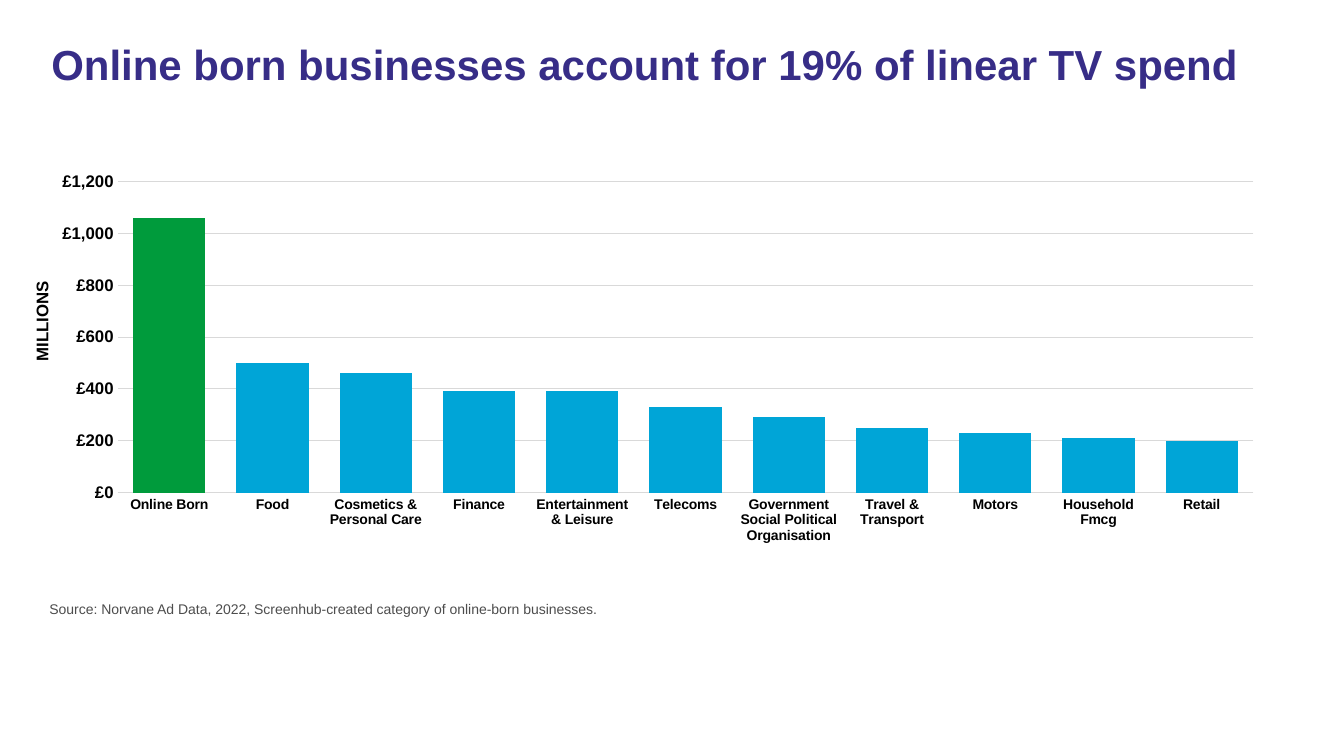
from dataclasses import dataclass

from pptx import Presentation
from pptx.chart.data import CategoryChartData
from pptx.dml.color import RGBColor
from pptx.enum.chart import XL_CHART_TYPE as ChartType, XL_TICK_MARK as Tick
from pptx.enum.text import MSO_ANCHOR as Anchor, MSO_AUTO_SIZE as AutoSize, PP_ALIGN as Align
from pptx.oxml import parse_xml
from pptx.oxml.ns import nsdecls, qn
from pptx.util import Cm, Pt


@dataclass(frozen=True)
class Theme:
    """Colours and type sizes of the slide."""
    font: str = "Arial"
    heading: RGBColor = RGBColor.from_string("372D87")
    ink: RGBColor = RGBColor.from_string("000000")
    muted: RGBColor = RGBColor.from_string("4D4D4D")
    bar: RGBColor = RGBColor.from_string("00A5D7")
    highlight: RGBColor = RGBColor.from_string("009B3C")
    grid: RGBColor = RGBColor.from_string("D9D9D9")
    heading_size: int = 30
    axis_size: int = 12
    small_size: int = 10


@dataclass(frozen=True)
class Box:
    """A region of the slide in centimetres."""
    left: float
    top: float
    width: float
    height: float

    def lengths(self):
        """Return the four measures as lengths."""
        return [Cm(self.left), Cm(self.top), Cm(self.width), Cm(self.height)]


THEME = Theme()
SPEND = {
    "Online Born": 1060,
    "Food": 500,
    "Cosmetics & Personal Care": 460,
    "Finance": 390,
    "Entertainment & Leisure": 390,
    "Telecoms": 330,
    "Government Social Political Organisation": 290,
    "Travel & Transport": 250,
    "Motors": 230,
    "Household Fmcg": 210,
    "Retail": 200,
}
PLOT = {"x": 0.043, "y": 0.034, "w": 0.9, "h": 0.73}


def assign(target, values):
    """Set each named attribute on the target."""
    for name, value in values.items():
        setattr(target, name, value)


def style_font(font, size, color, bold=False):
    """Apply the theme font with a size and colour."""
    assign(font, {"name": THEME.font, "size": Pt(size), "bold": bold})
    font.color.rgb = color


def style_line(line):
    """Draw a thin grid-coloured line."""
    line.color.rgb = THEME.grid
    line.width = Pt(0.75)


def write(holder, box, text, size, color, bold=False, align=Align.LEFT, spacing=1.0):
    """Place a text holder and fill it with one paragraph."""
    assign(holder, dict(zip(("left", "top", "width", "height"), box.lengths())))
    frame = holder.text_frame
    assign(frame, {"text": text, "word_wrap": True, "auto_size": AutoSize.NONE,
                   "vertical_anchor": Anchor.TOP})
    paragraph = frame.paragraphs[0]
    assign(paragraph, {"alignment": align, "line_spacing": spacing, "space_before": Pt(0)})
    style_font(paragraph.runs[0].font, size, color, bold)
    return paragraph


def add_heading(slide, box):
    """Write the headline in the title placeholder."""
    write(slide.shapes.title, box, "Online born businesses account for 19% of linear TV spend",
          THEME.heading_size, THEME.heading, bold=True, spacing=0.9)


def add_source(slide, box):
    """Write the source line in the body placeholder without a bullet."""
    source = write(slide.placeholders[1], box,
                   "Source: Norvane Ad Data, 2022, Screenhub-created category of online-born businesses.",
                   THEME.small_size, THEME.muted)
    properties = source._p.get_or_add_pPr()
    properties.set("marL", "0")
    properties.set("indent", "0")
    properties.append(parse_xml(f"<a:buNone {nsdecls('a')}/>"))


def fix_plot_area(chart):
    """Pin the inner plot area to its share of the chart."""
    plot_area = chart.element.find(".//" + qn("c:plotArea"))
    for layout in plot_area.findall(qn("c:layout")):
        plot_area.remove(layout)
    modes = '<c:layoutTarget val="inner"/><c:xMode val="edge"/><c:yMode val="edge"/>'
    shares = "".join(f'<c:{side} val="{share}"/>' for side, share in PLOT.items())
    plot_area.insert(0, parse_xml(
        f"<c:layout {nsdecls('c')}><c:manualLayout>{modes}{shares}</c:manualLayout></c:layout>"))


def style_axes(chart):
    """Format the category and spend axes."""
    categories, spend = chart.category_axis, chart.value_axis
    for axis, size in ((categories, THEME.small_size), (spend, THEME.axis_size)):
        assign(axis, {"major_tick_mark": Tick.NONE, "minor_tick_mark": Tick.NONE})
        style_font(axis.tick_labels.font, size, THEME.ink, bold=True)
    categories.has_major_gridlines = False
    style_line(categories.format.line)
    assign(spend, {"minimum_scale": 0, "maximum_scale": 1300, "major_unit": 200,
                   "has_major_gridlines": True})
    assign(spend.tick_labels, {"number_format": '"£"#,##0', "number_format_is_linked": False})
    style_line(spend.major_gridlines.format.line)
    spend.format.line.fill.background()


def add_spend_chart(slide, box):
    """Draw spend by category with its unit label on the left."""
    data = CategoryChartData()
    data.categories = list(SPEND)
    data.add_series("Series 1", list(SPEND.values()))
    chart = slide.shapes.add_chart(ChartType.COLUMN_CLUSTERED, *box.lengths(), data).chart
    assign(chart, {"has_legend": False, "has_title": False})
    style_font(chart.font, THEME.small_size, THEME.ink)
    columns = chart.plots[0]
    assign(columns, {"gap_width": 43, "overlap": -27, "vary_by_categories": False})
    spend = columns.series[0]
    for fill, color in ((spend.format.fill, THEME.bar),
                        (spend.points[0].format.fill, THEME.highlight)):
        fill.solid()
        fill.fore_color.rgb = color
    style_axes(chart)
    fix_plot_area(chart)

    unit_box = Box(box.left - 1.95, box.top + 4.19, 2.87, 0.76)
    unit = slide.shapes.add_textbox(*unit_box.lengths())
    write(unit, unit_box, "MILLIONS", THEME.axis_size, THEME.ink, bold=True, align=Align.CENTER)
    unit.rotation = 270


def main():
    """Build and save the slide."""
    deck = Presentation()
    assign(deck, {"slide_width": Cm(33.87), "slide_height": Cm(19.05)})
    slide = deck.slides.add_slide(deck.slide_layouts[1])
    add_spend_chart(slide, Box(1.57, 3.53, 31.83, 11.63))
    add_heading(slide, Box(1.04, 0.99, 31.5, 2.84))
    add_source(slide, Box(0.99, 15.01, 32.05, 0.84))
    deck.save("out.pptx")


if __name__ == "__main__":
    main()
